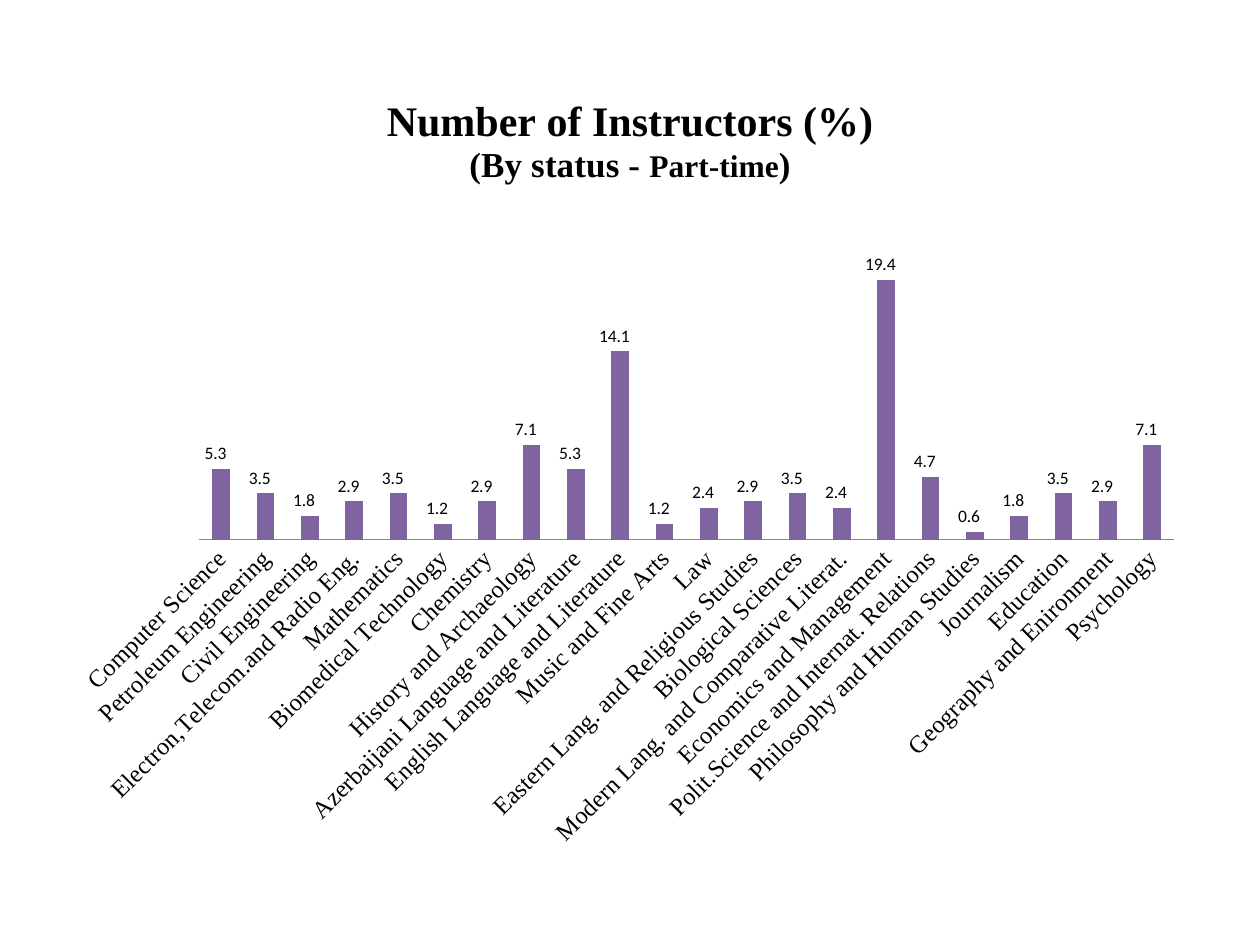
from dataclasses import dataclass
from typing import NamedTuple

from lxml.etree import SubElement
from pptx import Presentation
from pptx.chart.chart import Chart
from pptx.chart.data import CategoryChartData
from pptx.dml.color import RGBColor
from pptx.enum.chart import XL_CHART_TYPE, XL_LABEL_POSITION, XL_TICK_MARK
from pptx.oxml.ns import qn
from pptx.util import Pt


@dataclass(frozen=True)
class Theme:
    ink: RGBColor = RGBColor(0, 0, 0)
    bar: RGBColor = RGBColor(0x80, 0x64, 0xA2)
    axis: RGBColor = RGBColor(0x87, 0x87, 0x87)
    serif: str = "Times New Roman"
    sans: str = "Calibri"
    head: int = 24
    sub: int = 20
    note: int = 18
    names: int = 14
    label: int = 10


class Field(NamedTuple):
    name: str
    share: float


class Part(NamedTuple):
    text: str
    size: int


THEME = Theme()
FORMAT = r"_-* #,##0.0_р_._-;\-* #,##0.0_р_._-;_-* "
FRAME = {"x": 0.12, "y": 0.17, "w": 0.86, "h": 0.42}
TITLE = [
    [Part("Number of Instructors (%)", THEME.head)],
    [
        Part("(By status - ", THEME.sub),
        Part("Part-time", THEME.note),
        Part(")", THEME.sub),
    ],
]
FIELDS = [
    Field("Computer Science", 5.3),
    Field("Petroleum Engineering", 3.5),
    Field("Civil Engineering", 1.8),
    Field("Electron,Telecom.and Radio Eng.", 2.9),
    Field("Mathematics", 3.5),
    Field("Biomedical Technology", 1.2),
    Field("Chemistry", 2.9),
    Field("History and Archaeology", 7.1),
    Field("Azerbaijani Language and Literature", 5.3),
    Field("English Language and Literature", 14.1),
    Field("Music and Fine Arts", 1.2),
    Field("Law", 2.4),
    Field("Eastern Lang. and Religious Studies", 2.9),
    Field("Biological Sciences", 3.5),
    Field("Modern Lang. and Comparative Literat.", 2.4),
    Field("Economics and Management", 19.4),
    Field("Polit.Science and Internat. Relations", 4.7),
    Field("Philosophy and Human Studies", 0.6),
    Field("Journalism", 1.8),
    Field("Education", 3.5),
    Field("Geography and Enironment", 2.9),
    Field("Psychology", 7.1),
]


def add_title(chart: Chart) -> None:
    title = chart.chart_title
    title.include_in_layout = False
    frame = title.text_frame
    for i, line in enumerate(TITLE):
        para = frame.add_paragraph() if i else frame.paragraphs[0]
        para.font.name = THEME.serif
        para.font.bold = True
        for part in line:
            run = para.add_run()
            run.text = part.text
            font = run.font
            font.name, font.size, font.bold = THEME.serif, Pt(part.size), True
            font.color.rgb = THEME.ink


def set_axes(chart: Chart) -> None:
    names = chart.category_axis
    names.major_tick_mark = XL_TICK_MARK.NONE
    names.format.line.color.rgb = THEME.axis
    names.format.line.width = Pt(0.75)
    font = names.tick_labels.font
    font.name, font.size = THEME.serif, Pt(THEME.names)
    font.color.rgb = THEME.ink
    body = chart.element.find(f".//{qn('c:catAx')}/{qn('c:txPr')}/{qn('a:bodyPr')}")
    body.set("rot", str(-45 * 60000))
    body.set("vert", "horz")

    scale = chart.value_axis
    scale.minimum_scale, scale.maximum_scale = 0, 25
    scale.has_major_gridlines = False
    scale.tick_labels.number_format = FORMAT
    scale.tick_labels.number_format_is_linked = False
    scale.visible = False


def set_bars(chart: Chart) -> None:
    plot = chart.plots[0]
    plot.gap_width, plot.overlap = 150, -25
    plot.vary_by_categories = False
    fill = plot.series[0].format.fill
    fill.solid()
    fill.fore_color.rgb = THEME.bar
    plot.has_data_labels = True
    labels = plot.data_labels
    labels.show_value = True
    labels.number_format = FORMAT
    labels.number_format_is_linked = False
    labels.position = XL_LABEL_POSITION.OUTSIDE_END


def set_frame(chart: Chart) -> None:
    """Fix the inner plot area as fractions of the chart."""
    area = chart.element.find(f".//{qn('c:plotArea')}")
    for old in area.findall(qn("c:layout")):
        area.remove(old)
    layout = SubElement(area, qn("c:layout"))
    area.insert(0, layout)
    manual = SubElement(layout, qn("c:manualLayout"))
    values = {"layoutTarget": "inner", "xMode": "edge", "yMode": "edge", **FRAME}
    for tag, value in values.items():
        SubElement(manual, qn(f"c:{tag}")).set("val", str(value))


def main() -> None:
    deck = Presentation()
    deck.slide_width, deck.slide_height = Pt(720), Pt(540)
    slide = deck.slides.add_slide(deck.slide_layouts.get_by_name("Blank"))

    data = CategoryChartData()
    data.categories = [field.name for field in FIELDS]
    data.add_series("Series 1", [field.share for field in FIELDS])
    chart = slide.shapes.add_chart(
        XL_CHART_TYPE.COLUMN_CLUSTERED, Pt(36), Pt(39.6), Pt(648), Pt(455.8), data
    ).chart
    chart.has_legend = False
    chart.font.name, chart.font.size = THEME.sans, Pt(THEME.label)
    chart.font.color.rgb = THEME.ink
    add_title(chart)
    set_axes(chart)
    set_bars(chart)
    set_frame(chart)
    deck.save("out.pptx")


if __name__ == "__main__":
    main()
